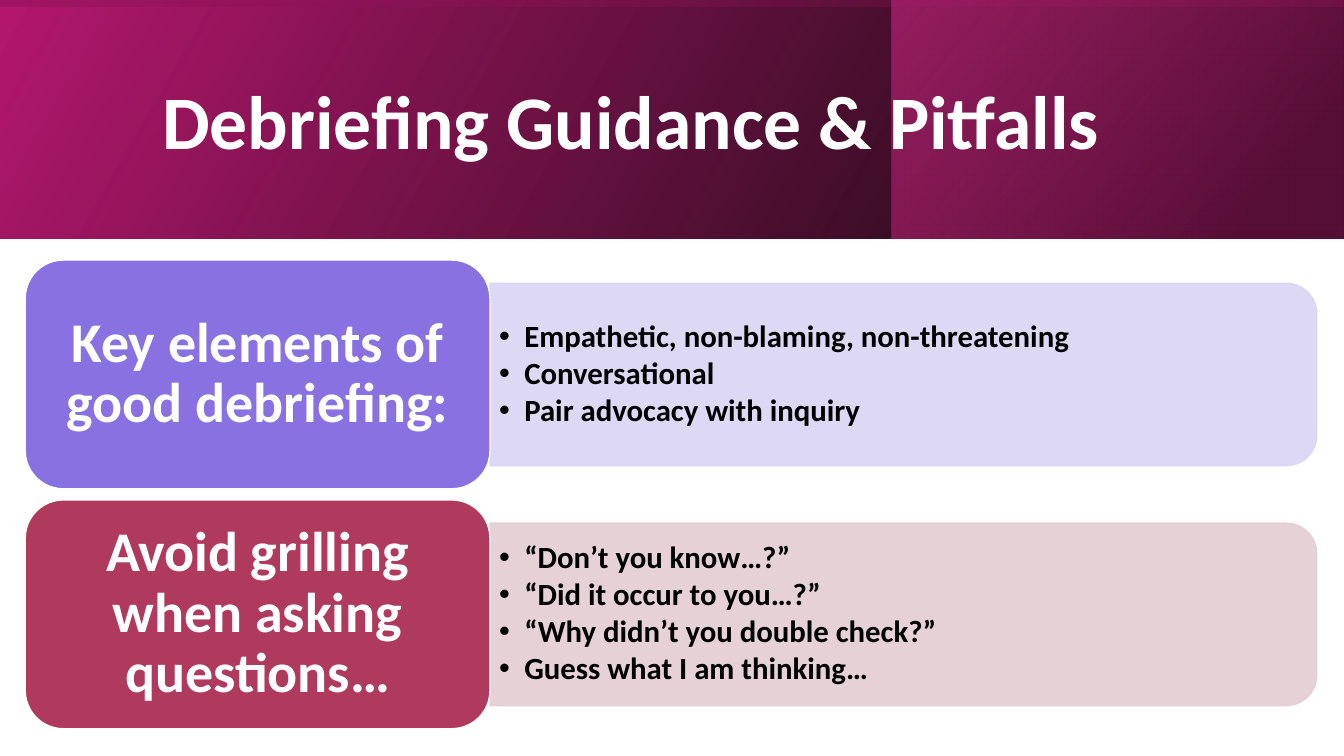
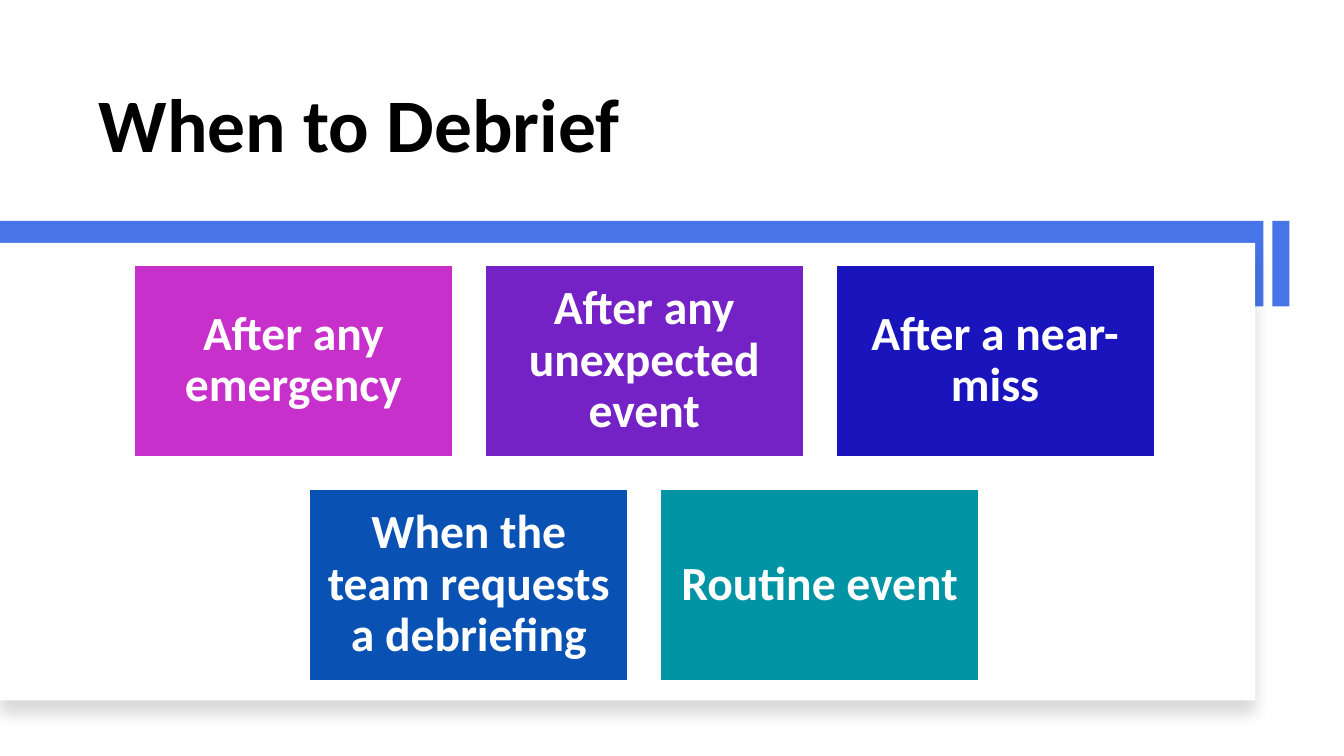
"""Build two slides on debriefing: guidance with pitfalls, and when to debrief."""
from lxml.etree import SubElement
from pptx import Presentation
from pptx.dml.color import RGBColor
from pptx.enum.shapes import MSO_SHAPE as Preset
from pptx.enum.text import MSO_ANCHOR as Anchor, PP_ALIGN as Align
from pptx.oxml.ns import qn
from pptx.util import Inches, Pt

FONT = "Calibri"
WHITE = RGBColor(0xFF, 0xFF, 0xFF)
BLACK = RGBColor(0x00, 0x00, 0x00)
MAGENTA = RGBColor(0xB4, 0x18, 0x6E)
PINK = RGBColor(0xE3, 0x2D, 0x91)
PLUM = RGBColor(0x78, 0x10, 0x49)
VIOLET = RGBColor(0x89, 0x71, 0xE1)
LAVENDER = RGBColor(0xDA, 0xD5, 0xF4)
CRIMSON = RGBColor(0xB0, 0x3A, 0x5D)
ROSE = RGBColor(0xE4, 0xCE, 0xD2)
BLUE = RGBColor(0x47, 0x75, 0xE7)
ORCHID = RGBColor(0xC8, 0x30, 0xCC)
PURPLE = RGBColor(0x74, 0x21, 0xC5)
INDIGO = RGBColor(0x1A, 0x14, 0xBD)
COBALT = RGBColor(0x09, 0x51, 0xB2)
TEAL = RGBColor(0x00, 0x94, 0xA5)

SLIDE_W, SLIDE_H = 13.33, 7.5
BAND_H = 2.37

GUIDANCE = [
    ("Key elements of good debriefing:", VIOLET, LAVENDER,
     ["Empathetic, non-blaming, non-threatening",
      "Conversational",
      "Pair advocacy with inquiry"]),
    ("Avoid grilling when asking questions…", CRIMSON, ROSE,
     ["“Don’t you know…?”",
      "“Did it occur to you…?”",
      "“Why didn’t you double check?”",
      "Guess what I am thinking…"]),
]
OCCASIONS = [
    [("After any emergency", ORCHID),
     ("After any unexpected event", PURPLE),
     ("After a near-miss", INDIGO)],
    [("When the team requests a debriefing", COBALT),
     ("Routine event", TEAL)],
]


def add_block(slide, preset, box, fill=None, line=None):
    """Add a shadowless preset shape with optional solid fill and 1 pt line."""
    block = slide.shapes.add_shape(preset, *map(Inches, box))
    block.shadow.inherit = False
    if fill is not None:
        block.fill.solid()
        block.fill.fore_color.rgb = fill
    if line is None:
        block.line.fill.background()
    else:
        block.line.color.rgb = line
        block.line.width = Pt(1)
    return block


def set_opacity(block, percents):
    """Give the colours of a shape, in order, their opacity."""
    colours = list(block._element.spPr.iter(qn("a:srgbClr")))
    for colour, percent in zip(colours, percents):
        SubElement(colour, qn("a:alpha"), val=str(percent * 1000))


def write(block, lines, size, colour, align=Align.LEFT, anchor=Anchor.MIDDLE,
          insets=(0.1, 0.05)):
    """Write bold paragraphs into a shape or text box."""
    frame = block.text_frame
    frame.word_wrap = True
    frame.vertical_anchor = anchor
    frame.margin_left = frame.margin_right = Inches(insets[0])
    frame.margin_top = frame.margin_bottom = Inches(insets[1])
    frame.text = "\n".join(lines)
    for paragraph in frame.paragraphs:
        paragraph.alignment = align
        paragraph.line_spacing = 0.9
        for run in paragraph.runs:
            run.font.name = FONT
            run.font.size = Pt(size)
            run.font.bold = True
            run.font.color.rgb = colour


def add_title(slide, text, box, colour, anchor):
    """Add the slide title."""
    title = slide.shapes.add_textbox(*map(Inches, box))
    write(title, [text], 54, colour, anchor=anchor)


def add_gradient(slide, box, stops, angle, rotation=0):
    """Add a mirrored rectangle with a two-stop, part-transparent gradient."""
    wash = add_block(slide, Preset.RECTANGLE, box)
    wash.rotation = rotation
    wash._element.spPr.xfrm.set("flipH", "1")
    wash.fill.gradient()
    wash.fill.gradient_angle = 360 - angle
    for stop, (position, colour, _) in zip(wash.fill.gradient_stops, stops):
        stop.position = position
        stop.color.rgb = colour
    set_opacity(wash, [opacity for _, _, opacity in stops])


def add_bullets(slide, lines, box):
    """Add a bulleted list."""
    points = slide.shapes.add_textbox(*map(Inches, box))
    write(points, lines, 22, BLACK, insets=(0.09, 0.05))
    for paragraph in points.text_frame.paragraphs:
        paragraph.space_after = Pt(2.7)
        properties = paragraph._p.get_or_add_pPr()
        properties.set("marL", str(Inches(0.25)))
        properties.set("indent", str(-Inches(0.25)))
        SubElement(properties, qn("a:buFont"), typeface="Arial")
        SubElement(properties, qn("a:buChar"), char="•")


def add_guidance_row(slide, top, heading, colour, tint, lines):
    """Add a heading card with its tinted panel of points."""
    card_left, card_w, card_h = 0.25, 4.61, 2.27
    panel_w, panel_h, points_h = 8.2, 1.81, 1.64
    panel_left = card_left + card_w
    middle = top + card_h / 2
    panel = add_block(slide, Preset.ROUND_2_SAME_RECTANGLE,
                      (panel_left + (panel_w - panel_h) / 2,
                       middle - panel_w / 2, panel_h, panel_w), tint, tint)
    panel.rotation = 90
    set_opacity(panel, (90, 90))
    add_bullets(slide, lines, (panel_left, middle - points_h / 2, 8.11, points_h))
    card = add_block(slide, Preset.ROUNDED_RECTANGLE,
                     (card_left, top, card_w, card_h), colour, WHITE)
    write(card, [heading], 40, WHITE, Align.CENTER, insets=(0.17, 0.08))


def add_shadowed_panel(slide, box):
    """Add the white panel that casts a soft shadow downwards."""
    panel = add_block(slide, Preset.RECTANGLE, box, WHITE)
    effects = panel._element.spPr.find(qn("a:effectLst"))
    shadow = SubElement(effects, qn("a:outerShdw"), blurRad=str(Pt(11)),
                        dist=str(Pt(10)), dir="5400000", algn="t", rotWithShape="0")
    colour = SubElement(shadow, qn("a:srgbClr"), val=str(BLACK))
    SubElement(colour, qn("a:alpha"), val="15000")


def add_occasion_tiles(slide):
    """Lay the occasions out in centred rows of equal tiles."""
    tile_w, tile_h, gap, centre, top = 3.16, 1.9, 0.32, 6.39, 2.63
    for row, occasions in enumerate(OCCASIONS):
        count = len(occasions)
        left = centre - (count * tile_w + (count - 1) * gap) / 2
        for column, (text, colour) in enumerate(occasions):
            tile = add_block(slide, Preset.RECTANGLE,
                             (left + column * (tile_w + gap),
                              top + row * (tile_h + gap), tile_w, tile_h),
                             colour, WHITE)
            write(tile, [text], 34, WHITE, Align.CENTER, insets=(0.14, 0.14))


def build_guidance(slide):
    """Build the guidance and pitfalls slide."""
    add_gradient(slide, (0, 0, SLIDE_W, BAND_H),
                 [(0, BLACK, 96), (1, MAGENTA, 100)], 330)
    add_gradient(slide, (8.84, 0, 4.48, BAND_H),
                 [(0.19, PLUM, 68), (1, PINK, 48)], 320)
    offset = (SLIDE_W - BAND_H) / 2
    add_gradient(slide, (offset, -offset, BAND_H, SLIDE_W),
                 [(0.23, MAGENTA, 16), (0.99, BLACK, 45)], 350, rotation=270)
    add_title(slide, "Debriefing Guidance & Pitfalls", (1.51, 0.38, 10.63, 1.72),
              WHITE, Anchor.MIDDLE)
    for row, guidance in enumerate(GUIDANCE):
        add_guidance_row(slide, 2.58 + row * 2.38, *guidance)


def build_occasions(slide):
    """Build the slide on when to debrief."""
    add_title(slide, "When to Debrief", (0.88, 0.42, 10.1, 1.3), BLACK, Anchor.BOTTOM)
    for left, width in ((12.62, 0.17), (0, 12.53)):
        add_block(slide, Preset.RECTANGLE, (left, 2.19, width, 0.85), BLUE)
    add_shadowed_panel(slide, (0, 2.41, 12.45, 4.54))
    add_occasion_tiles(slide)


def main():
    """Create and save the presentation."""
    deck = Presentation()
    deck.slide_width, deck.slide_height = Inches(SLIDE_W), Inches(SLIDE_H)
    for build in (build_guidance, build_occasions):
        build(deck.slides.add_slide(deck.slide_layouts[6]))
    deck.save("out.pptx")


if __name__ == "__main__":
    main()
